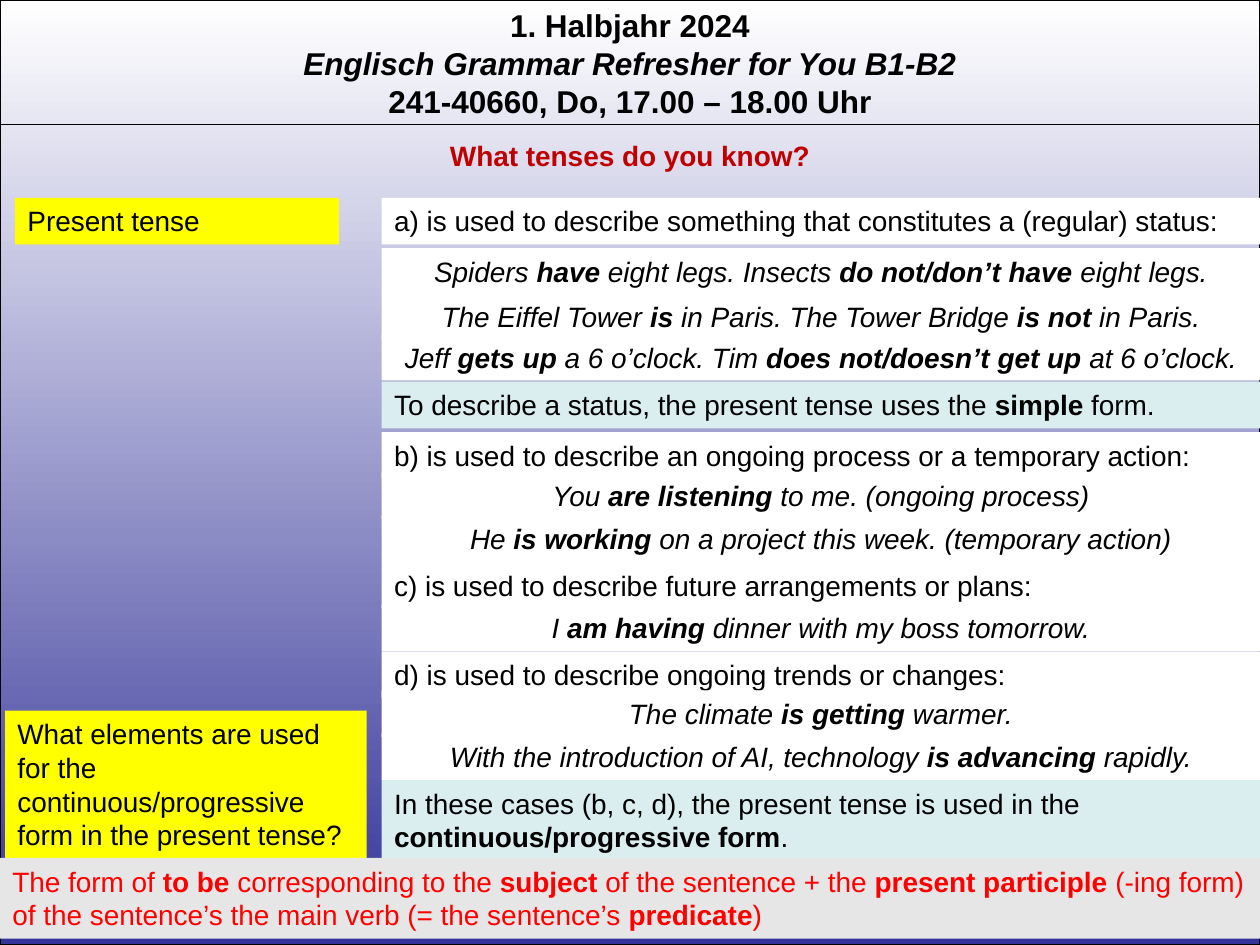
from pptx import Presentation
from pptx.dml.color import RGBColor
from pptx.enum import shapes, text
from pptx.oxml.ns import qn
from pptx.util import Inches, Pt
from lxml import etree


def color(hex_value):
    return RGBColor.from_string(hex_value)


def add_box(left, top, width, height, lines, fill=None, ink="000000",
            size=16, centered=False, italic=False):
    """Add a text box; parts between ** marks are bold."""
    box = slide.shapes.add_textbox(Inches(left), Inches(top), Inches(width), Inches(height))
    if fill:
        box.fill.solid()
        box.fill.fore_color.rgb = color(fill)
    frame = box.text_frame
    frame.word_wrap = True
    frame.auto_size = text.MSO_AUTO_SIZE.SHAPE_TO_FIT_TEXT
    for number, line in enumerate(lines):
        paragraph = frame.add_paragraph() if number else frame.paragraphs[0]
        if centered:
            paragraph.alignment = text.PP_ALIGN.CENTER
        for part_number, part in enumerate(line.split("**")):
            if not part:
                continue
            run = paragraph.add_run()
            run.text = part
            run.font.name = "Arial"
            run.font.size = Pt(size)
            run.font.bold = part_number % 2 == 1
            run.font.italic = italic
            run.font.color.rgb = color(ink)
    return box


prs = Presentation()
prs.slide_width, prs.slide_height = Inches(10), Inches(7.5)
slide = prs.slides.add_slide(prs.slide_layouts[6])

# Background from white to blue
backdrop = slide.shapes.add_shape(shapes.MSO_SHAPE.RECTANGLE, 0, 0, Inches(10), Inches(7.5))
backdrop.shadow.inherit = False
backdrop.fill.gradient()
backdrop.fill.gradient_angle = 270
for stop, shade, position in zip(backdrop.fill.gradient_stops, ("FFFFFF", "333399"), (0, 1)):
    stop.color.rgb = color(shade)
    stop.position = position
backdrop.line.color.rgb = color("000000")
backdrop.line.width = Pt(0.75)

# Course header with rule below
header = add_box(0, 0, 10, 1.01, [
    "**1. Halbjahr 2024**",
    "**Englisch Grammar Refresher for You B1-B2**",
    "**241-40660, Do, 17.00 – 18.00 Uhr**",
], size=18, centered=True)
header.text_frame.paragraphs[1].runs[0].font.italic = True

rule = slide.shapes.add_connector(shapes.MSO_CONNECTOR.STRAIGHT,
                                  0, Inches(0.99), Inches(10), Inches(0.99))
rule.line.color.rgb = color("000000")
rule.line.width = Pt(0.75)
etree.SubElement(rule._element.spPr, qn("a:effectLst"))

# Question and topic
add_box(0, 1.05, 10, 0.37, ["**What tenses do you know?**"], ink="C00000", centered=True)
add_box(0.12, 1.57, 2.57, 0.37, ["Present tense"], fill="FFFF00")

# Uses, examples and summaries in the right column: top, kind, wording
uses = [
    (1.57, "use", "a) is used to describe something that constitutes a (regular) status:"),
    (1.97, "example", "Spiders **have** eight legs. Insects **do not/don’t have **eight legs."),
    (3.03, "summary", "To describe a status, the present tense uses the **simple** form."),
    (3.43, "use", "b) is used to describe an ongoing process or a temporary action:"),
    (6.19, "summary", "In these cases (b, c, d), the present tense is used in the "
                      "**continuous/progressive form**."),
    (2.33, "example", "The Eiffel Tower **is** in Paris. The Tower Bridge **is not **in Paris."),
    (2.65, "example", "Jeff **gets up **a 6 o’clock. Tim **does not/doesn’t get up **at 6 o’clock."),
    (3.75, "example", "You **are listening **to me. (ongoing process)"),
    (4.09, "example", "He **is working **on a project this week. (temporary action)"),
    (4.46, "use", "c) is used to describe future arrangements or plans:"),
    (4.8, "example", "I **am having **dinner with my boss tomorrow."),
    (5.17, "use", "d) is used to describe ongoing trends or changes:"),
    (5.48, "example", "The climate **is getting **warmer."),
    (5.82, "example", "With the introduction of AI, technology **is advancing **rapidly."),
]
for top, kind, wording in uses:
    is_example = kind == "example"
    add_box(3.03, top, 6.97, 0.64 if top == 6.19 else 0.37, [wording],
            fill="DAEDEF" if kind == "summary" else "FFFFFF",
            centered=is_example, italic=is_example)

# Closing question and answer
add_box(0.04, 5.64, 2.87, 1.18,
        ["What elements are used for the continuous/progressive form in the present tense?"],
        fill="FFFF00")
add_box(0, 6.81, 10.04, 0.64,
        ["The form of **to be **corresponding to the **subject** of the sentence + the "
         "**present participle **(-ing form) of the sentence’s the main verb "
         "(= the sentence’s **predicate**)"],
        fill="E6E6E6", ink="FF0000")

prs.save("out.pptx")
